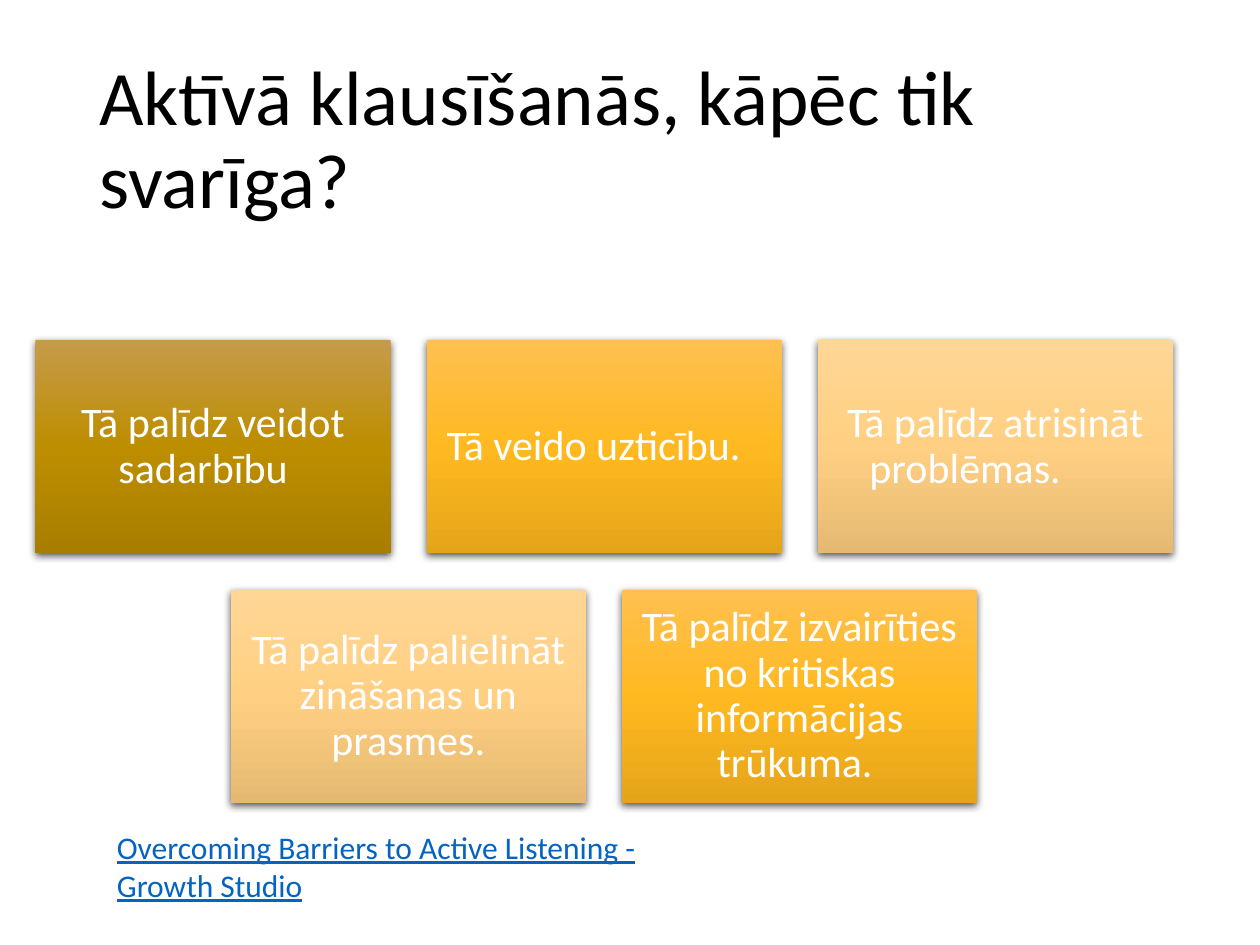
from copy import deepcopy

from lxml.etree import SubElement
from pptx import Presentation
from pptx.dml.color import RGBColor
from pptx.enum.shapes import MSO_SHAPE
from pptx.enum.text import MSO_ANCHOR, PP_ALIGN
from pptx.oxml.ns import qn
from pptx.util import Inches, Pt

FONT = "Calibri"
BLACK = RGBColor(0x00, 0x00, 0x00)
WHITE = RGBColor(0xFF, 0xFF, 0xFF)
LINK_BLUE = RGBColor(0x05, 0x63, 0xC1)
BRONZE = [RGBColor(0xC5, 0x9B, 0x4B), RGBColor(0xBD, 0x8E, 0x00), RGBColor(0xA8, 0x7E, 0x00)]
AMBER = [RGBColor(0xFF, 0xC0, 0x51), RGBColor(0xFF, 0xB9, 0x20), RGBColor(0xE5, 0xA5, 0x1A)]
PEACH = [RGBColor(0xFF, 0xD6, 0x95), RGBColor(0xFF, 0xD0, 0x83), RGBColor(0xE5, 0xB9, 0x72)]

CARD_WIDTH, CARD_HEIGHT = 2.82, 1.69
COLUMN_STEP = 3.105
# Each row: left, top, cards. A closing tab shifts the last line of its card.
REASON_ROWS = [
    (0.28, 2.7, [
        ("Tā palīdz veidot sadarbību\t", BRONZE),
        ("Tā veido uzticību.\t", AMBER),
        ("Tā palīdz atrisināt problēmas.\t", PEACH),
    ]),
    (1.83, 4.68, [
        ("Tā palīdz palielināt zināšanas un prasmes.", PEACH),
        ("Tā palīdz izvairīties no kritiskas informācijas trūkuma. ", AMBER),
    ]),
]


def write(frame, text, size, color):
    frame.word_wrap = True
    paragraph = frame.paragraphs[0]
    paragraph.text = text
    paragraph.font.name = FONT
    paragraph.font.size = Pt(size)
    paragraph.font.color.rgb = color
    return paragraph


def add_label(slide, left, top, width, height, text, size, color):
    box = slide.shapes.add_textbox(Inches(left), Inches(top), Inches(width), Inches(height))
    return box.text_frame, write(box.text_frame, text, size, color)


def fill_gradient(shape, colors):
    """Spread the colours evenly from top to bottom."""
    shape.fill.gradient()
    shape.fill.gradient_angle = 270
    stop_list = next(shape._element.spPr.iter(qn("a:gsLst")))
    stop_list.append(deepcopy(stop_list[-1]))
    for index, (stop, color) in enumerate(zip(shape.fill.gradient_stops, colors)):
        stop.position = index / (len(colors) - 1)
        stop.color.rgb = color


def add_soft_shadow(shape):
    shape.shadow.inherit = False
    effects = shape._element.spPr.find(qn("a:effectLst"))
    shadow = SubElement(effects, qn("a:outerShdw"), blurRad=str(Pt(4.5)), dist=str(Pt(1.5)),
                        dir="5400000", algn="ctr", rotWithShape="0")
    shade = SubElement(shadow, qn("a:srgbClr"), val="000000")
    SubElement(shade, qn("a:alpha"), val="63000")


def add_reason_card(slide, left, top, text, colors):
    card = slide.shapes.add_shape(MSO_SHAPE.RECTANGLE, Inches(left), Inches(top),
                                  Inches(CARD_WIDTH), Inches(CARD_HEIGHT))
    fill_gradient(card, colors)
    card.line.fill.background()
    add_soft_shadow(card)
    frame = card.text_frame
    frame.margin_left = frame.margin_right = Inches(0.1)
    frame.margin_top = frame.margin_bottom = Inches(0.1)
    frame.vertical_anchor = MSO_ANCHOR.MIDDLE
    reason = write(frame, text, 24, WHITE)
    reason.alignment = PP_ALIGN.CENTER
    reason.line_spacing = 0.9


def main():
    presentation = Presentation()
    presentation.slide_width = Inches(10)
    presentation.slide_height = Inches(7.5)
    slide = presentation.slides.add_slide(presentation.slide_layouts[6])

    title_frame, title = add_label(slide, 0.69, 0.4, 8.62, 1.45,
                                   "Aktīvā klausīšanās, kāpēc tik svarīga?", 44, BLACK)
    title_frame.vertical_anchor = MSO_ANCHOR.MIDDLE
    title.line_spacing = 0.9

    for left, top, reasons in REASON_ROWS:
        for column, (text, colors) in enumerate(reasons):
            add_reason_card(slide, left + column * COLUMN_STEP, top, text, colors)

    _, reference = add_label(slide, 0.83, 6.52, 5, 0.71,
                             "Overcoming Barriers to Active Listening - Growth Studio",
                             18, LINK_BLUE)
    reference.font.underline = True

    presentation.save("out.pptx")


if __name__ == "__main__":
    main()
